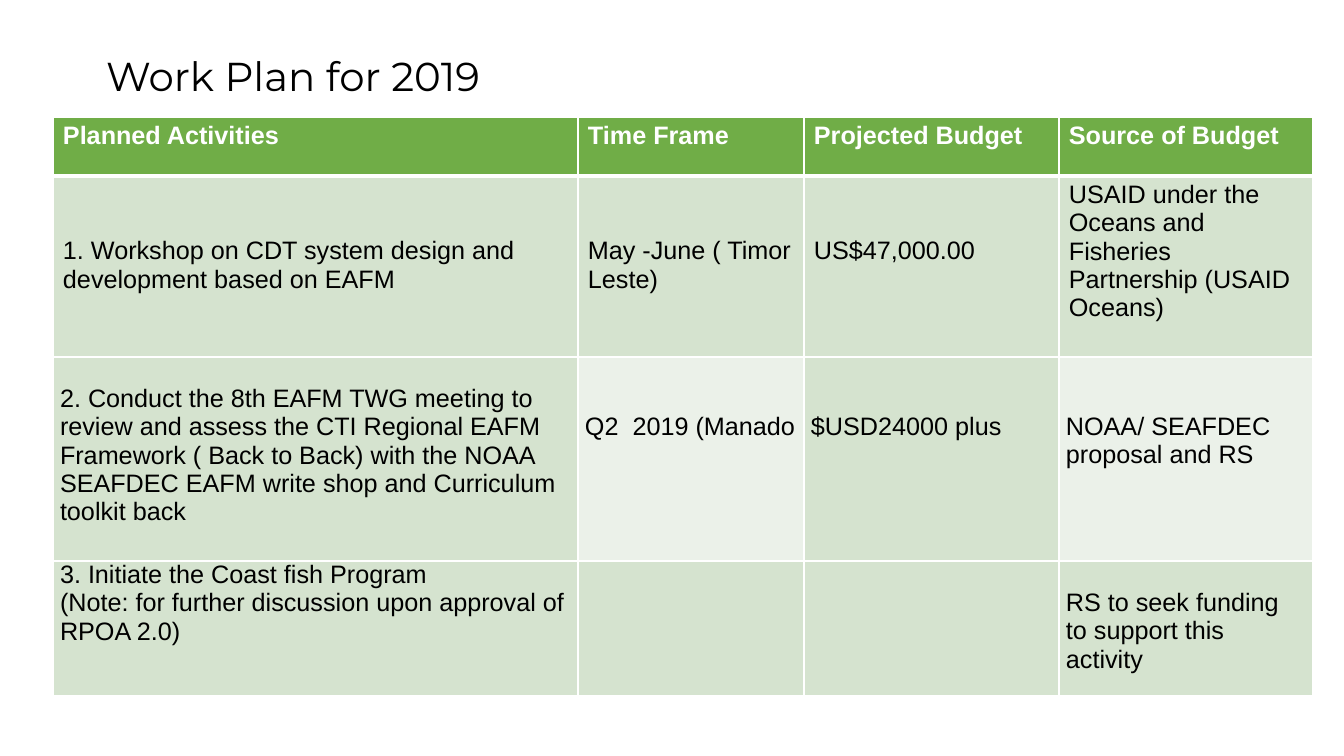
from lxml import etree
from pptx import Presentation
from pptx import util as u
from pptx.dml.color import RGBColor
from pptx.enum import text
from pptx.oxml.ns import qn

PX = 914400 / 100.8


def px(n):
    return u.Emu(round(n * PX))


def paint(fill, tone):
    fill.solid()
    fill.fore_color.rgb = RGBColor.from_string(tone)


HEAD, SAGE, PALE = "70AD47", "D5E3CF", "EBF1E9"
WHITE, BLACK = "FFFFFF", "000000"
LINE = 28  # one line of 18 pt text

prs = Presentation()
prs.slide_width, prs.slide_height = px(1344), px(756)
slide = prs.slides.add_slide(prs.slide_layouts[5])

# Title
title = slide.shapes.title
title.left, title.top, title.width, title.height = px(96), px(56), px(1056), px(49)
frame = title.text_frame
frame.text = "Work Plan for 2019"
frame.word_wrap = True
frame.auto_size = text.MSO_AUTO_SIZE.NONE
frame.vertical_anchor = text.MSO_ANCHOR.BOTTOM
para = frame.paragraphs[0]
para.alignment = text.PP_ALIGN.LEFT
para.line_spacing = 0.9
para.font.name, para.font.size = "Montserrat", u.Pt(28.8)
paint(para.font.fill, BLACK)

# Each cell: wording, lines it is dropped by, fill
plan = [
    [("Planned Activities", 0, HEAD), ("Time Frame", 0, HEAD),
     ("Projected Budget", 0, HEAD), ("Source of Budget", 0, HEAD)],
    [("1. Workshop on CDT system design and development based on EAFM", 2, SAGE),
     ("May -June ( Timor Leste)", 2, SAGE),
     ("US$47,000.00", 2, SAGE),
     ("USAID under the Oceans and Fisheries Partnership (USAID Oceans)", 0, SAGE)],
    [("2. Conduct the 8th EAFM TWG meeting to review and assess the CTI Regional "
      "EAFM Framework ( Back to Back) with the NOAA SEAFDEC EAFM write shop and "
      "Curriculum toolkit back", 1, SAGE),
     ("Q2  2019 (Manado", 2, PALE),
     ("$USD24000 plus", 2, SAGE),
     ("NOAA/ SEAFDEC proposal and RS", 2, PALE)],
    [("3. Initiate the Coast fish Program\n"
      "(Note: for further discussion upon approval of RPOA 2.0)", 0, SAGE),
     ("", 0, SAGE), ("", 0, SAGE),
     ("RS to seek funding to support this activity", 1, SAGE)],
]
wides, highs = [525, 226, 255, 254], [59, 181, 204, 135]

# Table grid
table = slide.shapes.add_table(len(highs), len(wides), px(53), px(117),
                               px(sum(wides)), px(sum(highs))).table
for col, wide in zip(table.columns, wides):
    col.width = px(wide)
for row, high in zip(table.rows, highs):
    row.height = px(high)

# Cells
for r, line in enumerate(plan):
    side, top = (10, 5) if r < 2 else (7, 0)
    for c, (words, drop, tone) in enumerate(line):
        cell = table.cell(r, c)
        cell.text = words
        cell.margin_left = cell.margin_right = px(side)
        cell.margin_top = px(top + drop * LINE)
        cell.margin_bottom = px(top)

        # Borders, thicker below the header
        props = cell._tc.get_or_add_tcPr()
        for edge in ("lnL", "lnR", "lnT", "lnB"):
            thick = (r, edge) in ((0, "lnB"), (1, "lnT"))
            rule = etree.SubElement(props, qn("a:" + edge), w=str(u.Pt(3 if thick else 1)))
            solid = etree.SubElement(rule, qn("a:solidFill"))
            etree.SubElement(solid, qn("a:srgbClr"), val=WHITE)
        paint(cell.fill, tone)

        for para in cell.text_frame.paragraphs:
            para.font.name, para.font.size = "Arial", u.Pt(18)
            para.font.bold = r == 0
            paint(para.font.fill, BLACK if r else WHITE)

prs.save("out.pptx")
